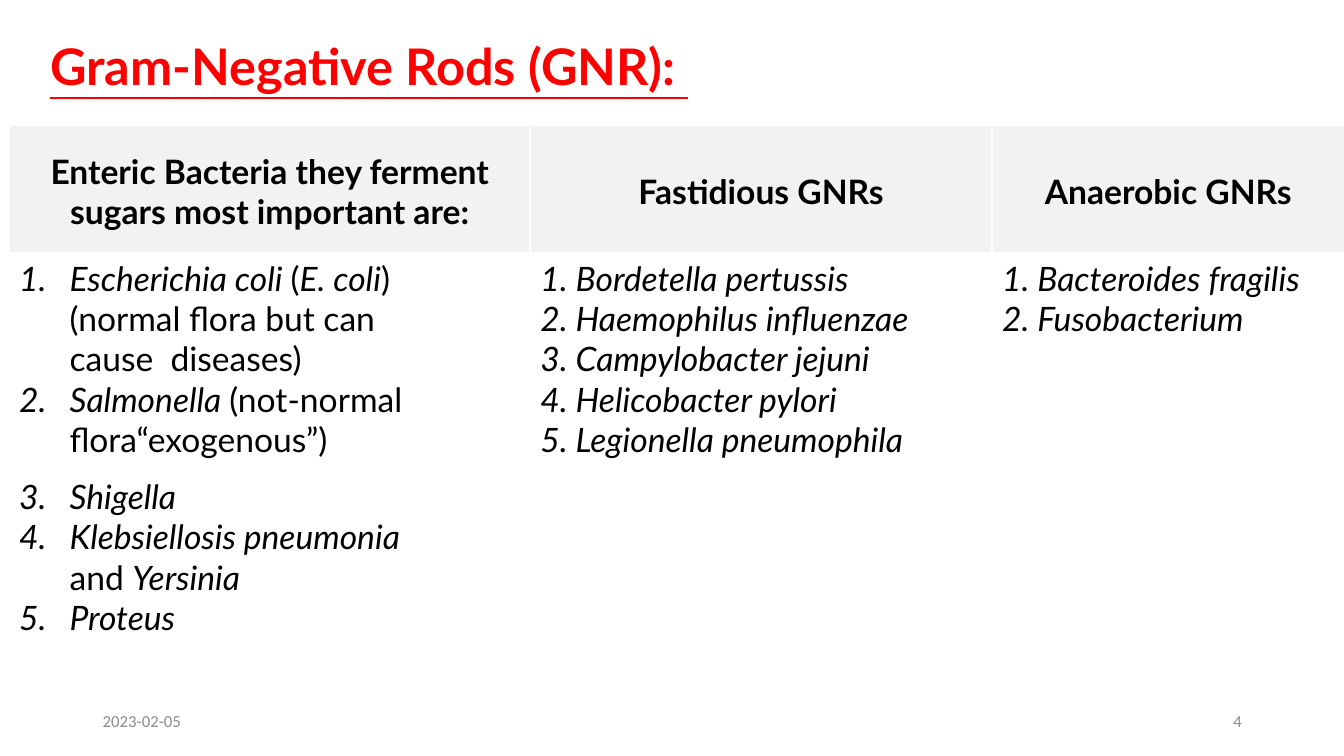
import pptx
import pptx.util
import pptx.dml.color
import pptx.enum.text
from lxml import etree

Pt = pptx.util.Pt
Align = pptx.enum.text.PP_ALIGN
Anchor = pptx.enum.text.MSO_ANCHOR
NS = "http://schemas.openxmlformats.org/drawingml/2006/main"

deck = pptx.Presentation()
deck.slide_width = pptx.util.Inches(13.333)
deck.slide_height = pptx.util.Inches(7.5)
wide = deck.slide_width / 100    # one percent of the slide's width
high = deck.slide_height / 100   # one percent of the slide's height
slide = deck.slides.add_slide(deck.slide_layouts[6])


def style(font, size, face, tint, bold=False):
    font.size = Pt(size)
    font.name = face
    font.bold = bold
    font.color.rgb = pptx.dml.color.RGBColor.from_string(tint)


def label(spot, text, align, anchor):
    """Add a text box at a spot given in percent of the slide."""
    x, y, w, h = spot
    box = slide.shapes.add_textbox(int(x * wide), int(y * high),
                                   int(w * wide), int(h * high))
    frame = box.text_frame
    frame.word_wrap = True
    frame.vertical_anchor = anchor
    para = frame.paragraphs[0]
    para.text = text
    para.alignment = align
    return frame, para


# Title
frame, para = label((3.75, 4.4, 63.15, 8.27), "Gram-Negative Rods (GNR): ",
                    Align.LEFT, Anchor.TOP)
frame.margin_left = frame.margin_right = frame.margin_bottom = 0
frame.margin_top = Pt(1)
para.space_before = Pt(1.1)
style(para.font, 36, "Lato", "FF0000", True)
para.font.underline = True

# Date and slide number
for x, text, align in ((6.9, "2023-02-05", Align.LEFT), (70.65, "4", Align.RIGHT)):
    frame, para = label((x, 92.67, 22.5, 5.33), text, align, Anchor.MIDDLE)
    style(para.font, 12, "Calibri", "8C8C8C")

# Table: each list item is a row of runs that alternate italic and upright
heads = ("Enteric Bacteria they ferment sugars most important are:",
         "Fastidious GNRs", "Anaerobic GNRs")
lists = (
    (("Escherichia coli ", "(", "E. coli", ") (normal flora but can cause  diseases)"),
     ("Salmonella ", "(not-normal flora“exogenous”)"),
     ("Shigella",),
     ("Klebsiellosis pneumonia ", "and ", "Yersinia"),
     ("Proteus",)),
    (("1. Bordetella pertussis",), ("2. Haemophilus influenzae",),
     ("3. Campylobacter jejuni",), ("4. Helicobacter pylori",),
     ("5. Legionella pneumophila",)),
    (("1. Bacteroides fragilis",), ("2. Fusobacterium",)),
)
cols = (38.78, 34.35, 26.25)
rows = (17.07, 56.13)
table = slide.shapes.add_table(2, 3, int(0.68 * wide), int(16.53 * high),
                               int(sum(cols) * wide), int(sum(rows) * high)).table
table.first_row = table.horz_banding = False
for col, share in zip(table.columns, cols):
    col.width = int(share * wide)
for row, share in zip(table.rows, rows):
    row.height = int(share * high)

for c, (head, items) in enumerate(zip(heads, lists)):
    top, body = table.cell(0, c), table.cell(1, c)
    top.vertical_anchor = Anchor.MIDDLE
    para = top.text_frame.paragraphs[0]
    para.text = head
    para.alignment = Align.CENTER
    para.space_before = Pt(3.1)
    style(para.font, 24, "Lato", "000000", True)

    for i, runs in enumerate(items):
        frame = body.text_frame
        para = frame.paragraphs[0] if i == 0 else frame.add_paragraph()
        style(para.font, 24, "Lato", "000000")
        para.font.italic = True
        para.space_before = Pt(3.1 if i == 0 else 0)
        for j, text in enumerate(runs):
            run = para.add_run()
            run.text = text
            style(run.font, 24, "Lato", "000000")
            run.font.italic = j % 2 == 0
        props = para._p.get_or_add_pPr()
        props.set("marL", str(pptx.util.Inches(0.6 if c == 0 else 0.1)))
        if c == 0:
            props.set("indent", str(pptx.util.Inches(-0.5)))
            etree.SubElement(props, f"{{{NS}}}buFont", typeface="+mj-lt")
            etree.SubElement(props, f"{{{NS}}}buAutoNum", type="arabicPeriod")
            # the schema wants default run properties last
            for tail in props.findall(f"{{{NS}}}defRPr"):
                props.append(tail)
            if i == 2:
                para.space_before = Pt(12)

    for cell, tint, edges in ((top, "F2F2F2", (1.5, 1.5, 1.5, 3)),
                              (body, "FFFFFF", (1.5, 1.5, 3, 1.5))):
        cell.margin_left = cell.margin_right = cell.margin_bottom = 0
        cell.margin_top = pptx.util.Inches(0.04)
        cell.fill.solid()
        cell.fill.fore_color.rgb = pptx.dml.color.RGBColor.from_string(tint)
        props = cell._tc.get_or_add_tcPr()
        for k, (side, size) in enumerate(zip("LRTB", edges)):
            line = etree.Element(f"{{{NS}}}ln{side}", w=str(Pt(size)))
            fill = etree.SubElement(line, f"{{{NS}}}solidFill")
            etree.SubElement(fill, f"{{{NS}}}srgbClr", val="FFFFFF")
            props.insert(k, line)

table.cell(1, 0).margin_right = int(7 * wide)
deck.save("out.pptx")
